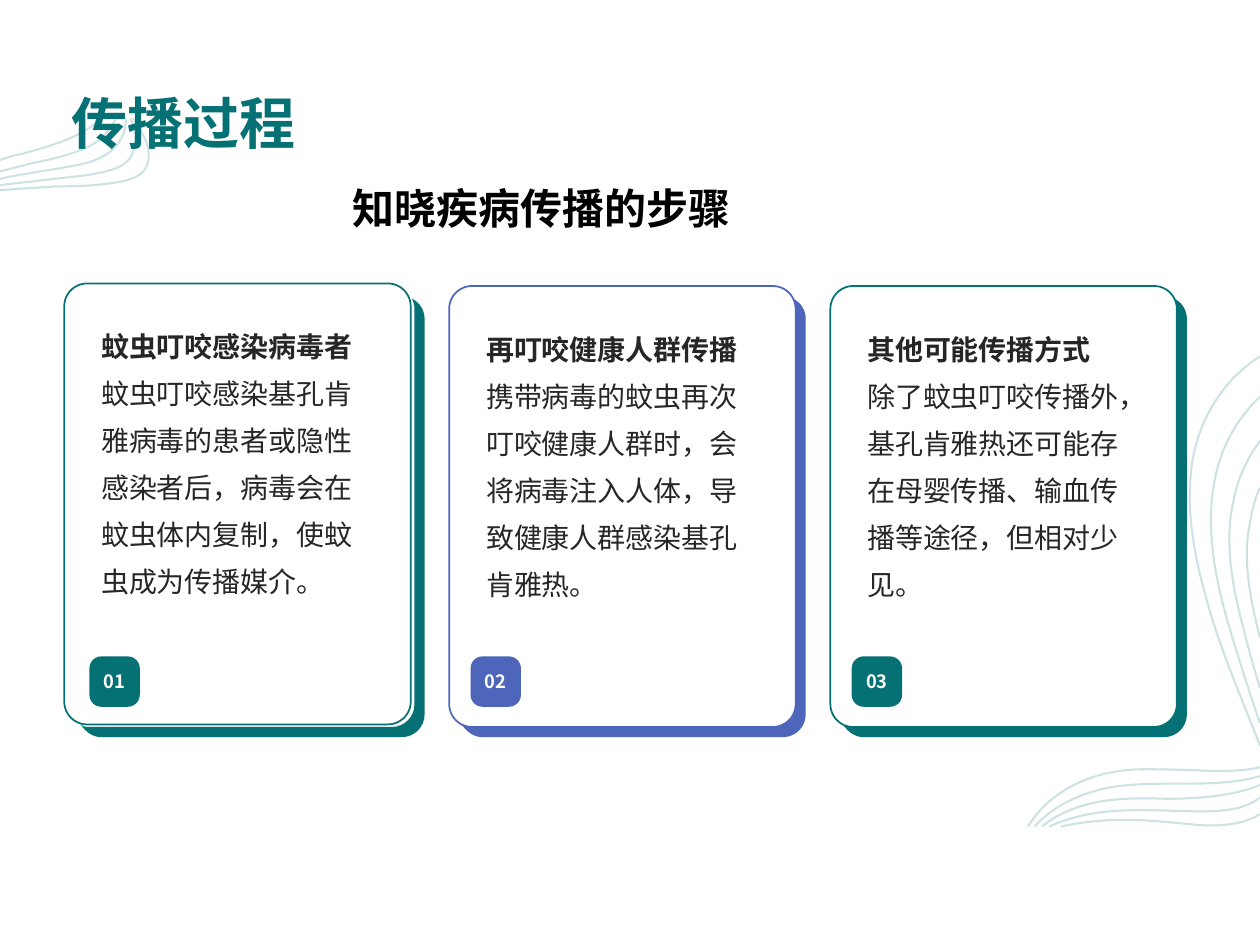
import dataclasses
import typing

import pptx
import pptx.dml.color
import pptx.enum.shapes
import pptx.enum.text
import pptx.oxml.ns
import pptx.util
from lxml import etree

Point = tuple[float, float]
Curve = list[Point]  # start point, then three points for each cubic piece
RGB = pptx.dml.color.RGBColor
ANCHOR = pptx.enum.text.MSO_ANCHOR
ALIGN = pptx.enum.text.PP_ALIGN
ROUNDED = pptx.enum.shapes.MSO_SHAPE.ROUNDED_RECTANGLE
qn = pptx.oxml.ns.qn


@dataclasses.dataclass(frozen=True)
class Theme:
    teal: RGB = RGB(0x05, 0x71, 0x74)
    blue: RGB = RGB(0x4D, 0x65, 0xBB)
    mist: RGB = RGB(0xCD, 0xE3, 0xE3)
    ink: RGB = RGB(0x26, 0x26, 0x26)
    black: RGB = RGB(0, 0, 0)
    white: RGB = RGB(0xFF, 0xFF, 0xFF)
    cjk: str = "Noto Sans CJK SC"
    latin: str = "Arial"
    title: float = 32
    subtitle: float = 24
    body: float = 16
    badge: float = 10.5
    wave: float = 1.2


@dataclasses.dataclass(frozen=True)
class Box:
    """Columns and rows on a 10 by 7.5 grid."""
    col: float
    row: float
    cols: float
    rows: float


@dataclasses.dataclass(frozen=True)
class Step:
    number: str
    heading: str
    detail: str
    color: RGB
    lift: Point = (0, 0)  # how far the card is moved from its grid place


THEME = Theme()
COLUMNS, ROWS = 10, 7.5
CELL = pptx.util.Inches(1)
FIRST_COLUMN, PITCH = 0.64, 6.05 / 2
SHADOW_TOP = 2.37

STEPS = [
    Step("01", "蚊虫叮咬感染病毒者",
         "蚊虫叮咬感染基孔肯雅病毒的患者或隐性感染者后，病毒会在蚊虫体内复制，使蚊虫成为传播媒介。",
         THEME.teal, (-0.03, -0.02)),
    Step("02", "再叮咬健康人群传播",
         "携带病毒的蚊虫再次叮咬健康人群时，会将病毒注入人体，导致健康人群感染基孔肯雅热。",
         THEME.blue),
    Step("03", "其他可能传播方式",
         "除了蚊虫叮咬传播外，基孔肯雅热还可能存在母婴传播、输血传播等途径，但相对少见。",
         THEME.teal),
]

LEFT_WAVES: list[Curve] = [
    [(0, 1.27), (.06, 1.25), (.12, 1.23), (.18, 1.22), (.35, 1.17), (.65, 1.1), (.8, .94)],
    [(1.06, .94), (1.1, 1), (1.13, 1.06), (1.16, 1.12), (1.2, 1.24), (1.2, 1.38), (1.01, 1.43),
     (.85, 1.47), (.64, 1.48), (.44, 1.48), (.3, 1.49), (.12, 1.5), (0, 1.51)],
    [(1.04, .94), (1.08, 1.06), (1.1, 1.19), (1.01, 1.28), (.94, 1.36), (.72, 1.39), (.52, 1.41),
     (.35, 1.43), (.17, 1.45), (0, 1.47)],
    [(1, .94), (1, 1.08), (.93, 1.21), (.73, 1.28), (.59, 1.33), (.2, 1.37), (0, 1.42)],
    [(.92, .94), (.89, 1), (.85, 1.06), (.79, 1.11), (.67, 1.2), (.48, 1.25), (.28, 1.29),
     (.19, 1.31), (.09, 1.34), (0, 1.36)],
]
RIGHT_WAVES: list[Curve] = [
    [(10, 3.87), (9.95, 3.97), (9.93, 4.1), (9.91, 4.21), (9.87, 4.46), (9.92, 4.75), (10, 5.06)],
    [(10, 3.5), (9.9, 3.64), (9.82, 3.8), (9.79, 3.98), (9.72, 4.27), (9.77, 4.62), (9.87, 4.99),
     (9.91, 5.15), (9.95, 5.3), (10, 5.46)],
    [(10, 3.15), (9.83, 3.31), (9.7, 3.53), (9.65, 3.77), (9.58, 4.07), (9.61, 4.41), (9.7, 4.77),
     (9.78, 5.08), (9.89, 5.41), (10, 5.74)],
    [(10, 2.83), (9.92, 2.88), (9.85, 2.94), (9.78, 3.01), (9.59, 3.22), (9.47, 3.48), (9.45, 3.79),
     (9.42, 4.11), (9.49, 4.47), (9.6, 4.84), (9.7, 5.19), (9.86, 5.55), (10, 5.92)],
    [(10, 6.09), (9.83, 6.13), (9.62, 6.12), (9.41, 6.11), (9.26, 6.11), (9.11, 6.1), (8.97, 6.11),
     (8.6, 6.14), (8.31, 6.31), (8.16, 6.56)],
    [(10, 6.16), (9.79, 6.22), (9.58, 6.22), (9.37, 6.22), (9.15, 6.22), (8.94, 6.22), (8.76, 6.26),
     (8.55, 6.31), (8.36, 6.4), (8.21, 6.56)],
    [(10, 6.23), (9.84, 6.3), (9.59, 6.34), (9.26, 6.34), (8.92, 6.33), (8.56, 6.33), (8.27, 6.56)],
    [(10, 6.33), (9.89, 6.42), (9.73, 6.44), (9.54, 6.44), (9.14, 6.44), (8.72, 6.38), (8.33, 6.56)],
    [(10, 6.46), (9.9, 6.53), (9.74, 6.56), (9.54, 6.55), (9.25, 6.53), (8.88, 6.46), (8.42, 6.56)],
]
# Crescent to the right of and below a card, from its own top left corner
CRESCENT: Curve = [
    (2.63, 0), (2.69, .03), (2.73, .09), (2.73, .16), (2.73, 1.2), (2.73, 2.25), (2.73, 3.3),
    (2.73, 3.4), (2.65, 3.48), (2.55, 3.48), (1.75, 3.48), (.96, 3.48), (.16, 3.48),
    (.1, 3.48), (.04, 3.44), (0, 3.38), (.02, 3.4), (.05, 3.4), (.08, 3.4),
    (.88, 3.4), (1.67, 3.4), (2.47, 3.4), (2.57, 3.4), (2.65, 3.32), (2.65, 3.22),
    (2.65, 2.17), (2.65, 1.13), (2.65, .08), (2.65, .05), (2.64, .02), (2.63, 0),
]


def draw_curves(shapes: typing.Any, curves: list[Curve], closed: bool) -> typing.Any:
    """One outline holding every curve."""
    scaled = [[(x * CELL, y * CELL) for x, y in curve] for curve in curves]
    builder = shapes.build_freeform(*scaled[0][0])
    for index, (start, *rest) in enumerate(scaled):
        if index:
            builder.move_to(*start)
        builder.add_line_segments(rest, close=closed)
    outline = builder.convert_to_shape()
    outline.shadow.inherit = False
    # Join each three segments into one cubic piece
    segments = list(outline._element.iter(qn("a:lnTo")))
    for first in range(0, len(segments), 3):
        cubic, *others = segments[first:first + 3]
        cubic.tag = qn("a:cubicBezTo")
        for other in others:
            cubic.append(other[0])
            other.getparent().remove(other)
    return outline


def draw_waves(shapes: typing.Any, waves: list[Curve]) -> None:
    lines = draw_curves(shapes, waves, closed=False)
    lines.fill.background()
    lines.line.color.rgb = THEME.mist
    lines.line.width = pptx.util.Pt(THEME.wave)


def place(box: Box) -> list[int]:
    return [pptx.util.Emu(round(v * CELL)) for v in (box.col, box.row, box.cols, box.rows)]


def paint(part: typing.Any, fill: RGB, edge: RGB | None = None) -> None:
    part.shadow.inherit = False
    part.fill.solid()
    part.fill.fore_color.rgb = fill
    if edge is None:
        part.line.fill.background()
    else:
        part.line.color.rgb = edge
        part.line.width = pptx.util.Pt(1)


def draw_panel(shapes: typing.Any, box: Box, corner: float, fill: RGB, edge: RGB | None = None) -> typing.Any:
    panel = shapes.add_shape(ROUNDED, *place(box))
    panel.adjustments[0] = corner
    paint(panel, fill, edge)
    return panel


def write(holder: typing.Any, lines: list[tuple[str, bool]], size: float, color: RGB, font: str = THEME.cjk,
          insets: tuple[float, ...] = (0.1, 0.05, 0.1, 0.05), anchor: ANCHOR = ANCHOR.TOP,
          align: ALIGN = ALIGN.LEFT, spacing: float = 1.0, wrap: bool = True) -> None:
    frame = holder.text_frame
    sides = ("margin_left", "margin_top", "margin_right", "margin_bottom")
    frame_format = {"word_wrap": wrap, "vertical_anchor": anchor}
    frame_format |= {side: pptx.util.Inches(inset) for side, inset in zip(sides, insets)}
    for name, value in frame_format.items():
        setattr(frame, name, value)
    for index, (words, bold) in enumerate(lines):
        paragraph = frame.add_paragraph() if index else frame.paragraphs[0]
        paragraph.alignment, paragraph.line_spacing = align, spacing
        run = paragraph.add_run()
        run.text = words
        run.font.color.rgb = color
        for name, value in {"size": pptx.util.Pt(size), "bold": bold, "name": font}.items():
            setattr(run.font, name, value)
        etree.SubElement(run._r.get_or_add_rPr(), qn("a:ea")).set("typeface", THEME.cjk)


def draw_step(shapes: typing.Any, step: Step, left: float) -> None:
    crescent = [(left + x, SHADOW_TOP + y) for x, y in CRESCENT]
    paint(draw_curves(shapes, [crescent], closed=True), step.color)
    card = draw_panel(shapes, Box(left - 0.1 + step.lift[0], SHADOW_TOP - 0.1 + step.lift[1], 2.75, 3.5),
                      0.066, THEME.white, step.color)
    write(card, [(step.heading, True), (step.detail, False)], THEME.body, THEME.ink,
          insets=(0.24, 0.21, 0.24, 0.57), spacing=1.4)
    badge = draw_panel(shapes, Box(left + 0.07, 5.21, 0.4, 0.4), 0.238, step.color)
    write(badge, [(step.number, True)], THEME.badge, THEME.white,
          anchor=ANCHOR.MIDDLE, align=ALIGN.CENTER, wrap=False)


def main() -> None:
    deck = pptx.Presentation()
    deck.slide_width, deck.slide_height = round(COLUMNS * CELL), round(ROWS * CELL)
    shapes = deck.slides.add_slide(deck.slide_layouts[6]).shapes

    # Background waves
    for waves in (LEFT_WAVES, RIGHT_WAVES):
        draw_waves(shapes, waves)

    # Title
    title = shapes.add_textbox(*place(Box(0.57, 0.51, 8.86, 0.73)))
    write(title, [("传播过程", True)], THEME.title, THEME.teal, insets=(0, 0, 0, 0), anchor=ANCHOR.BOTTOM)

    # Steps
    for index, step in enumerate(STEPS):
        draw_step(shapes, step, FIRST_COLUMN + index * PITCH)

    # Subtitle
    subtitle = shapes.add_textbox(*place(Box(2.7, 1.4, 5.08, 0.59)))
    write(subtitle, [("知晓疾病传播的步骤", True)], THEME.subtitle, THEME.black, THEME.latin)

    deck.save("out.pptx")


if __name__ == "__main__":
    main()
